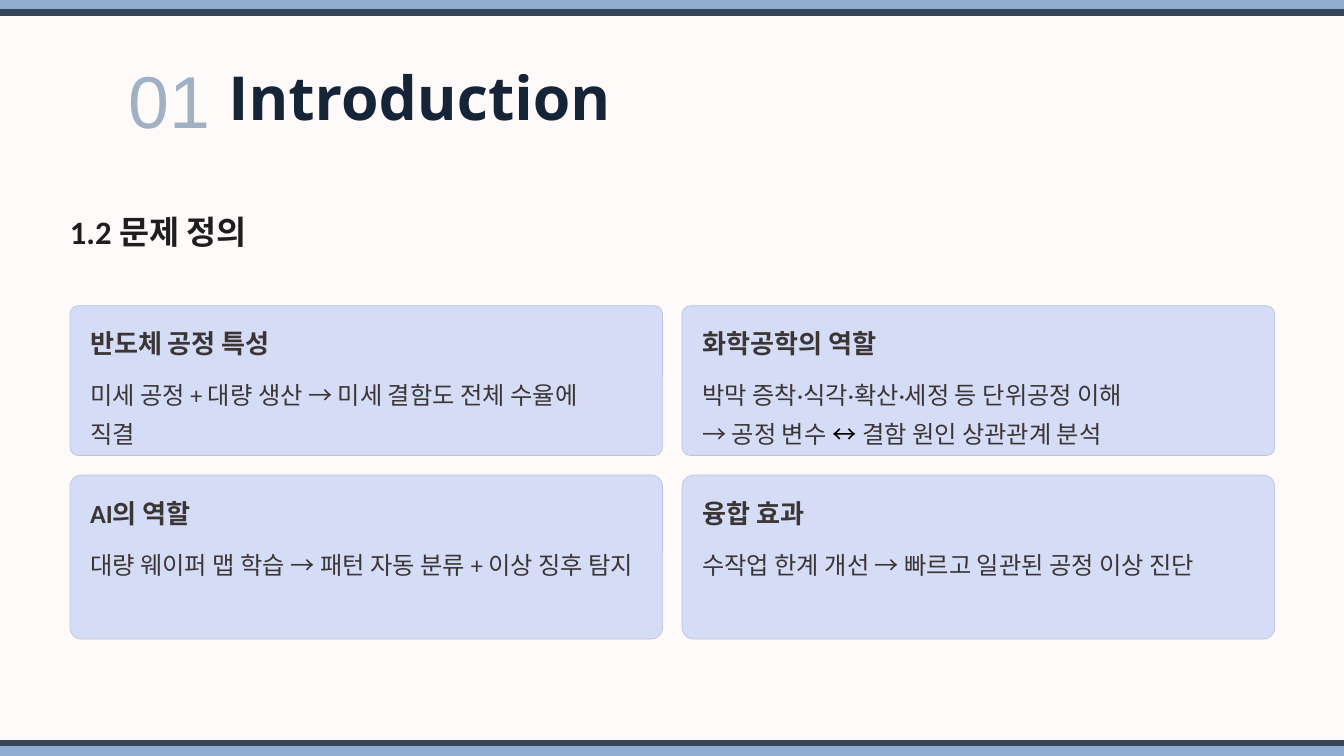
from lxml import etree
from pptx import Presentation
from pptx.dml.color import RGBColor
from pptx.enum.shapes import MSO_CONNECTOR, MSO_SHAPE
from pptx.enum.text import MSO_ANCHOR, MSO_AUTO_SIZE, PP_ALIGN
from pptx.oxml.ns import qn
from pptx.util import Inches, Pt

# Content: a paragraph is a list of (text, colour) runs
TITLE, NUMBER, SECTION = "Introduction", "01", "1.2 문제 정의"
CARDS = [
    ("반도체 공정 특성", [[("미세 공정 + 대량 생산 → 미세 결함도 전체 수율에\n직결", "body")]]),
    ("화학공학의 역할", [
        [("박막 증착·식각·확산·세정 등 단위공정 이해", "body")],
        [("→ 공정 변수 ", "body"), ("↔ ", "arrow"), ("결함 원인 상관관계 분석", "body")],
    ]),
    ("AI의 역할", [[("대량 웨이퍼 맵 학습 → 패턴 자동 분류 + 이상 징후 탐지", "body")]]),
    ("융합 효과", [[("수작업 한계 개선 → 빠르고 일관된 공정 이상 진단", "body")]]),
]
COLORS = {
    "background": "FFFAFA", "band": "8FADD1", "rule": "354457",
    "title": "152437", "number": "A0B1C4", "section": "1F1E1E",
    "card": "D5DCF6", "border": "BBC2DC", "body": "3B3535", "arrow": "000000",
}

# Layout in inches
CARD_LEFT, CARD_WIDTH, COLUMN_STEP = 1.04, 8.82, 9.11
CARD_ROWS = [(4.55, 2.23), (7.07, 2.44)]  # top, height
CORNER, PADDING = 0.125, 0.3
BANDS = [(0, 0.19), (11.1, 11.06)]  # band top, rule position


def color(name):
    return RGBColor.from_string(COLORS[name])


def write(shape, paragraphs, box, size, font="Calibri", bold=False,
          spacing=1.04, align=PP_ALIGN.LEFT):
    shape.left, shape.top, shape.width, shape.height = map(Inches, box)
    frame = shape.text_frame
    frame.word_wrap = True
    frame.auto_size = MSO_AUTO_SIZE.NONE
    frame.vertical_anchor = MSO_ANCHOR.TOP
    frame.margin_left = frame.margin_right = frame.margin_top = frame.margin_bottom = 0
    for index, runs in enumerate(paragraphs):
        paragraph = frame.add_paragraph() if index else frame.paragraphs[0]
        paragraph.alignment = align
        paragraph.line_spacing = spacing
        paragraph.space_before = Pt(0)
        for text, ink in runs:
            for line_index, line in enumerate(text.split("\n")):
                if line_index:
                    paragraph.add_line_break()
                run = paragraph.add_run()
                run.text = line
                run.font.name, run.font.size, run.font.bold = font, Pt(size), bold
                run.font.color.rgb = color(ink)


def add_text(slide, paragraphs, box, size, **style):
    write(slide.shapes.add_textbox(0, 0, 0, 0), paragraphs, box, size, **style)


def add_block(slide, kind, box, fill):
    block = slide.shapes.add_shape(kind, *map(Inches, box))
    block.shadow.inherit = False
    block.fill.solid()
    block.fill.fore_color.rgb = color(fill)
    block.line.fill.background()
    return block


def add_card(slide, index, heading, body):
    row, column = divmod(index, 2)
    left = CARD_LEFT + column * COLUMN_STEP
    top, height = CARD_ROWS[row]
    # The upper row has slightly tighter corners than the lower one
    corner = CORNER if row == 0 else 0.173
    card = add_block(slide, MSO_SHAPE.ROUNDED_RECTANGLE,
                     (left, top, CARD_WIDTH, height), "card")
    card.adjustments[0] = corner / height
    card.line.color.rgb = color("border")
    card.line.width = Pt(0.75)
    text_left = left + PADDING
    add_text(slide, [[(heading, "body")]], (text_left, top + 0.31, 3.9, 0.49), 28, bold=True)
    add_text(slide, body, (text_left, top + 0.97, 8.2, 0.47 * len(body)), 26, spacing=1.33)


def add_band(slide, band_top, rule_top):
    add_block(slide, MSO_SHAPE.RECTANGLE, (-0.21, band_top, 20.35, 0.15), "band")
    rule = slide.shapes.add_connector(
        MSO_CONNECTOR.STRAIGHT, *map(Inches, (-0.21, rule_top, 20.4, rule_top)))
    rule.line.color.rgb = color("rule")
    rule.line.width = Pt(7)
    etree.SubElement(rule._element.spPr, qn("a:effectLst"))


def main():
    deck = Presentation()
    deck.slide_width, deck.slide_height = Inches(20), Inches(11.25)
    slide = deck.slides.add_slide(deck.slide_layouts[5])
    slide.background.fill.solid()
    slide.background.fill.fore_color.rgb = color("background")

    # Section heading and cards
    add_text(slide, [[(SECTION, "section")]], (1.04, 3.13, 8.79, 0.97), 35, bold=True)
    for index, (heading, body) in enumerate(CARDS):
        add_card(slide, index, heading, body)

    # Top and bottom bands
    for band_top, rule_top in BANDS:
        add_band(slide, band_top, rule_top)

    # Title and chapter number
    write(slide.shapes.title, [[(TITLE, "title")]], (3.4, 0.45, 14.94, 1.09), 65,
          font="Open Sans", bold=True, spacing=1.4)
    add_text(slide, [[(NUMBER, "number")]], (1.72, 0.29, 1.61, 1.54), 78.7,
             font="Arial", spacing=1.4, align=PP_ALIGN.CENTER)

    deck.save("out.pptx")


if __name__ == "__main__":
    main()
